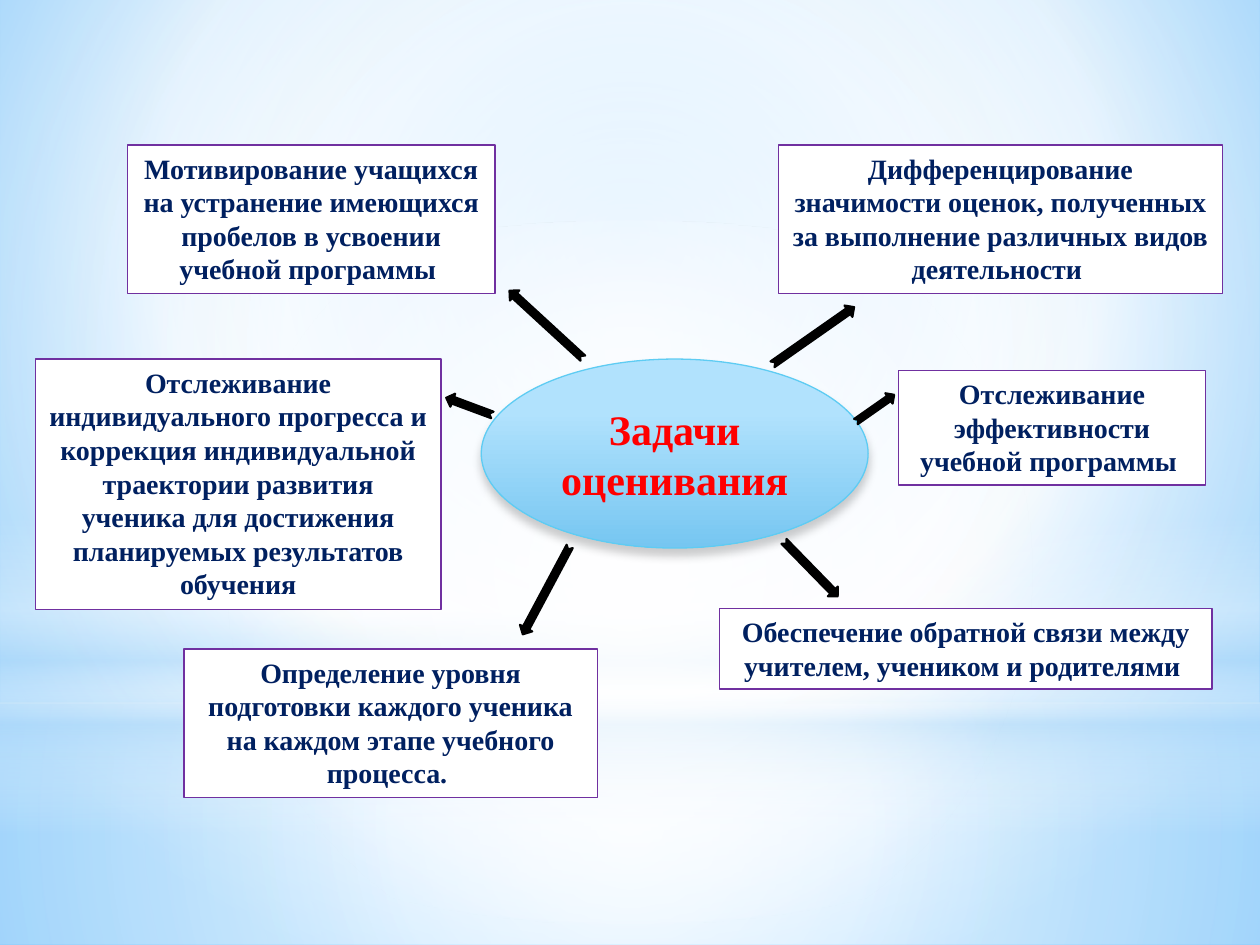
from lxml import etree
from pptx import Presentation, util as u
from pptx.dml.color import RGBColor
from pptx.enum import shapes, text
from pptx.oxml import parse_xml
from pptx.oxml.ns import nsdecls, qn

COLORS = {
    "white": "FFFFFF", "black": "000000", "navy": "002060",
    "red": "FF0000", "purple": "7030A0", "pale": "B4DCFA",
    "sky": "9ED5FF", "azure": "5BB9FF", "light": "B1E2FD",
    "blue": "76C6F1", "cyan": "5ECCF3",
}
FONT = "Times New Roman"
CENTER = (50, 50, 50, 50)
KINDS = shapes.MSO_SHAPE

BACKDROP = [
    (KINDS.RECTANGLE, (0, 5.58, 10, 1.92),
     [(0, "white", 91), (37, "white", 76), (100, "pale", 79)], CENTER),
    (KINDS.RECTANGLE, (0, 0, 10, 5.58),
     [(0, "white", 89), (48, "white", 62), (100, "pale", 79)], CENTER),
    (KINDS.RECTANGLE, (0, 4.12, 10, 2.5),
     [(0, "white", 0), (29, "white", 30), (45, "pale", 40),
      (55, "white", 26), (65, "pale", 60), (100, "white", 0)], None),
    (KINDS.OVAL, (0, 1.75, 10, 5.58),
     [(0, "white", 100), (56, "white", 0)], CENTER),
]
TASKS = [
    ((1.01, 1.15, 2.92, 1.18),
     "Мотивирование учащихся на устранение имеющихся пробелов в усвоении учебной программы "),
    ((6.18, 1.15, 3.52, 1.18),
     "Дифференцирование значимости оценок, полученных за выполнение различных видов деятельности "),
    ((0.28, 2.85, 3.22, 1.99),
     "Отслеживание индивидуального прогресса и коррекция индивидуальной траектории "
     "развития ученика для достижения планируемых результатов обучения"),
    ((7.13, 2.94, 2.44, 0.91),
     "Отслеживание эффективности учебной программы "),
    ((5.71, 4.83, 3.91, 0.64),
     "Обеспечение обратной связи между учителем, учеником и родителями "),
    ((1.46, 5.15, 3.28, 1.18),
     "Определение уровня подготовки каждого ученика на каждом этапе учебного процесса. "),
]
ARROWS = [
    ((6.06, 2.61, 0.79, 0.11), 325),
    ((3.94, 2.52, 0.79, 0.11), 222.6),
    ((6.76, 3.19, 0.37, 0.1), 325),
    ((3.53, 3.17, 0.39, 0.11), 200.4),
    ((6.13, 4.46, 0.61, 0.11), 45.7),
    ((3.94, 4.63, 0.79, 0.11), 118.1),
]


def rgb(name):
    return RGBColor.from_string(COLORS[name])


def inches(box):
    return [u.Inches(value) for value in box]


def set_gradient(fill, parent, stops, focus=None):
    fill.gradient()
    stop_xml = "".join(
        f'<a:gs pos="{position * 1000}"><a:srgbClr val="{COLORS[name]}">'
        f'<a:alpha val="{opacity * 1000}"/></a:srgbClr></a:gs>'
        for position, name, opacity in stops)
    if focus:
        left, top, right, bottom = (value * 1000 for value in focus)
        direction = (f'<a:path path="circle"><a:fillToRect l="{left}" t="{top}" '
                     f'r="{right}" b="{bottom}"/></a:path>')
    else:
        direction = '<a:lin ang="5400000" scaled="0"/>'
    gradient = parse_xml(f'<a:gradFill {nsdecls("a")} rotWithShape="1">'
                         f'<a:gsLst>{stop_xml}</a:gsLst>{direction}</a:gradFill>')
    parent.replace(parent.find(qn("a:gradFill")), gradient)


def set_line(shape, color, width):
    shape.line.color.rgb = rgb(color)
    shape.line.width = u.Pt(width)


def set_text(shape, words, size, color):
    frame = shape.text_frame
    frame.word_wrap = True
    frame.text = words
    paragraph = frame.paragraphs[0]
    paragraph.alignment = text.PP_ALIGN.CENTER
    font = paragraph.runs[0].font
    font.name, font.size, font.bold = FONT, u.Pt(size), True
    font.color.rgb = rgb(color)


def add_shape(slide, kind, box):
    shape = slide.shapes.add_shape(kind, *inches(box))
    shape.shadow.inherit = False
    return shape


def add_backdrop(slide):
    fill = slide.background.fill
    fill.gradient()
    set_gradient(fill, slide._element.find(".//" + qn("p:bgPr")),
                 [(0, "sky", 100), (60, "white", 100), (100, "azure", 100)],
                 (20, 10, 20, 60))
    for kind, box, stops, focus in BACKDROP:
        shape = add_shape(slide, kind, box)
        set_gradient(shape.fill, shape._element.spPr, stops, focus)
        shape.line.fill.background()


def add_center(slide):
    shape = add_shape(slide, KINDS.OVAL, (3.82, 2.85, 3.07, 1.5))
    properties = shape._element.spPr
    set_gradient(shape.fill, properties, [(28, "light", 100), (100, "blue", 100)])
    set_line(shape, "cyan", 0.75)
    shadow = etree.SubElement(
        properties.find(qn("a:effectLst")), qn("a:outerShdw"),
        blurRad=str(u.Pt(5)), dist=str(u.Pt(4)), dir="5400000", rotWithShape="0")
    color = etree.SubElement(shadow, qn("a:srgbClr"), val=COLORS["black"])
    etree.SubElement(color, qn("a:alpha"), val="20000")
    set_text(shape, "Задачи оценивания", 24, "red")
    shape.text_frame.vertical_anchor = text.MSO_ANCHOR.MIDDLE


def add_task(slide, box, words):
    shape = slide.shapes.add_textbox(*inches(box))
    shape.fill.solid()
    shape.fill.fore_color.rgb = rgb("white")
    set_line(shape, "purple", 0.75)
    set_text(shape, words, 16, "navy")
    shape.text_frame.auto_size = text.MSO_AUTO_SIZE.SHAPE_TO_FIT_TEXT


def add_arrow(slide, box, angle):
    shape = add_shape(slide, KINDS.NOTCHED_RIGHT_ARROW, box)
    shape.rotation = angle
    shape.fill.solid()
    shape.fill.fore_color.rgb = rgb("black")
    set_line(shape, "black", 1.25)


def main():
    presentation = Presentation()
    presentation.slide_width = u.Inches(10)
    presentation.slide_height = u.Inches(7.5)
    slide = presentation.slides.add_slide(presentation.slide_layouts[6])
    add_backdrop(slide)
    add_center(slide)
    for box, words in TASKS:
        add_task(slide, box, words)
    for box, angle in ARROWS:
        add_arrow(slide, box, angle)
    presentation.save("out.pptx")


if __name__ == "__main__":
    main()
